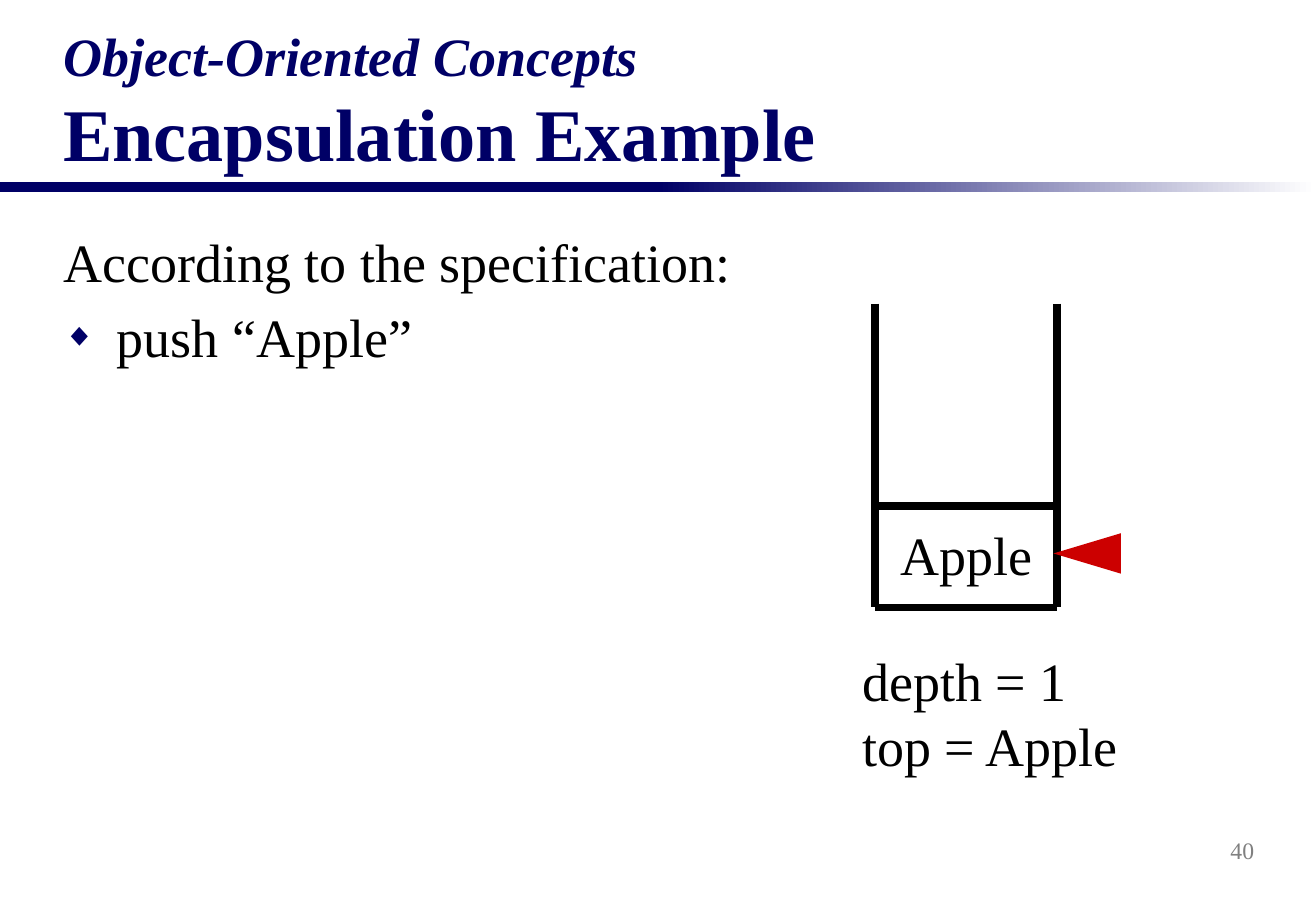
from dataclasses import dataclass

from lxml import etree
from pptx import Presentation
from pptx.dml.color import RGBColor
from pptx.enum.shapes import MSO_CONNECTOR, MSO_SHAPE
from pptx.enum.text import MSO_ANCHOR, MSO_AUTO_SIZE, PP_ALIGN
from pptx.oxml.ns import qn
from pptx.util import Inches, Pt

STRAIGHT = MSO_CONNECTOR.STRAIGHT
RECTANGLE = MSO_SHAPE.RECTANGLE
LEFT, RIGHT = PP_ALIGN.LEFT, PP_ALIGN.RIGHT
TOP, MIDDLE, BOTTOM = MSO_ANCHOR.TOP, MSO_ANCHOR.MIDDLE, MSO_ANCHOR.BOTTOM
FIXED_SIZE = MSO_AUTO_SIZE.NONE
TITLE_AND_CONTENT = 1
SLIDE_WIDTH, SLIDE_HEIGHT = 10.83, 7.5


@dataclass(frozen=True)
class Theme:
    font: str = "Times New Roman"
    navy: RGBColor = RGBColor(0x00, 0x00, 0x66)
    white: RGBColor = RGBColor(0xFF, 0xFF, 0xFF)
    black: RGBColor = RGBColor(0x00, 0x00, 0x00)
    gray: RGBColor = RGBColor(0x80, 0x80, 0x80)
    red: RGBColor = RGBColor(0xCC, 0x00, 0x00)
    heading: int = 44
    text: int = 32
    page: int = 14
    wall: float = 4.5
    pointer: int = 8


THEME = Theme()


def place(shape, box):
    for side, length in zip(("left", "top", "width", "height"), box):
        setattr(shape, side, Inches(length))


def set_frame(frame, anchor=TOP):
    formats = {"auto_size": FIXED_SIZE, "word_wrap": True, "vertical_anchor": anchor}
    for name, value in formats.items():
        setattr(frame, name, value)


def add_run(paragraph, words, size=THEME.text, color=THEME.black, **formats):
    run = paragraph.add_run()
    run.text = words
    run.font.color.rgb = color
    for name, value in {"name": THEME.font, "size": Pt(size), **formats}.items():
        setattr(run.font, name, value)


def add_label(slide, box, lines, align=LEFT, anchor=TOP, **formats):
    label = slide.shapes.add_textbox(*map(Inches, box))
    set_frame(label.text_frame, anchor)
    for i, words in enumerate(lines):
        paragraph = label.text_frame.add_paragraph() if i else label.text_frame.paragraphs[0]
        paragraph.alignment = align
        add_run(paragraph, words, **formats)


def add_line(slide, start, end, color, width):
    line = slide.shapes.add_connector(STRAIGHT, *map(Inches, (*start, *end)))
    line.line.color.rgb = color
    line.line.width = Pt(width)
    etree.SubElement(line._element.spPr, qn("a:effectLst"))
    return line


def add_title_rule(slide, box):
    """Draw a bar that is solid in its left half and fades out in its right half."""
    left, top, width, height = box
    for half in range(2):
        bar = slide.shapes.add_shape(RECTANGLE, 0, 0, 0, 0)
        place(bar, (left + half * width / 2, top, width / 2, height))
        bar.shadow.inherit = False
        bar.line.fill.background()
        if half:
            bar.fill.gradient()
            bar.fill.gradient_angle = 0
            for stop, color, position in zip(
                bar.fill.gradient_stops, (THEME.navy, THEME.white), (0, 1)
            ):
                stop.color.rgb = color
                stop.position = position
        else:
            bar.fill.solid()
            bar.fill.fore_color.rgb = THEME.navy


def fill_title(slide, box, topic, heading):
    title = slide.shapes.title
    place(title, box)
    set_frame(title.text_frame, BOTTOM)
    paragraph = title.text_frame.paragraphs[0]
    paragraph.alignment = LEFT
    add_run(paragraph, topic, color=THEME.navy, bold=True, italic=True)
    paragraph.add_line_break()
    add_run(paragraph, heading, THEME.heading, THEME.navy, bold=True, italic=False)


def set_bullet(paragraph, bulleted):
    """Give a hanging indent, with a small navy diamond if bulleted."""
    properties = paragraph._p.get_or_add_pPr()
    indent = Inches(0.44)
    properties.set("marL", str(indent))
    properties.set("indent", str(-indent))
    if not bulleted:
        etree.SubElement(properties, qn("a:buNone"))
        return
    color = etree.SubElement(properties, qn("a:buClr"))
    etree.SubElement(color, qn("a:srgbClr"), val=str(THEME.navy))
    etree.SubElement(properties, qn("a:buSzPct"), val="60000")
    etree.SubElement(properties, qn("a:buFont"), typeface=THEME.font)
    etree.SubElement(properties, qn("a:buChar"), char="◆")


def fill_body(slide, box, intro, steps):
    body = slide.placeholders[1]
    place(body, box)
    frame = body.text_frame
    set_frame(frame)
    for i, words in enumerate((intro, *steps)):
        paragraph = frame.add_paragraph() if i else frame.paragraphs[0]
        set_bullet(paragraph, i > 0)
        add_run(paragraph, words)


def draw_stack(slide, box, item, state):
    """Draw an open stack holding one item, a pointer to it and its state below."""
    left, top, width, height = box
    right, bottom = left + width, top + height
    item_top = bottom - height / 3
    add_label(slide, (left + 0.11, item_top + 0.08, 1.29, 0.63), [item])
    add_label(slide, (left - 0.2, bottom + 0.28, 2.33, 1.17), state)
    walls = (
        ((left, top), (left, bottom)),
        ((right, top), (right, bottom)),
        ((left, bottom), (right, bottom)),
        ((left, item_top), (right, item_top)),
    )
    for start, end in walls:
        add_line(slide, start, end, THEME.black, THEME.wall)
    level = item_top + 0.39
    pointer = add_line(
        slide, (right + 0.38, level), (right - 0.03, level), THEME.red, THEME.pointer
    )
    etree.SubElement(
        pointer.line._get_or_add_ln(), qn("a:tailEnd"), type="triangle", w="med", len="lg"
    )


def main():
    deck = Presentation()
    deck.slide_width, deck.slide_height = Inches(SLIDE_WIDTH), Inches(SLIDE_HEIGHT)
    slide = deck.slides.add_slide(deck.slide_layouts[TITLE_AND_CONTENT])
    add_title_rule(slide, (0, 1.5, SLIDE_WIDTH, 0.08))
    add_label(slide, (8.16, 6.75, 2.26, 0.5), ["40"], RIGHT, MIDDLE,
              size=THEME.page, color=THEME.gray)
    fill_title(slide, (0.42, 0.29, 10, 1.21),
               "Object-Oriented Concepts", "Encapsulation Example")
    fill_body(slide, (0.42, 1.83, 10, 5.42),
              "According to the specification:", ["push “Apple”"])
    draw_stack(slide, (7.2, 2.5, 1.5, 2.5), "Apple", ["depth = 1", "top = Apple"])
    deck.save("out.pptx")


if __name__ == "__main__":
    main()
